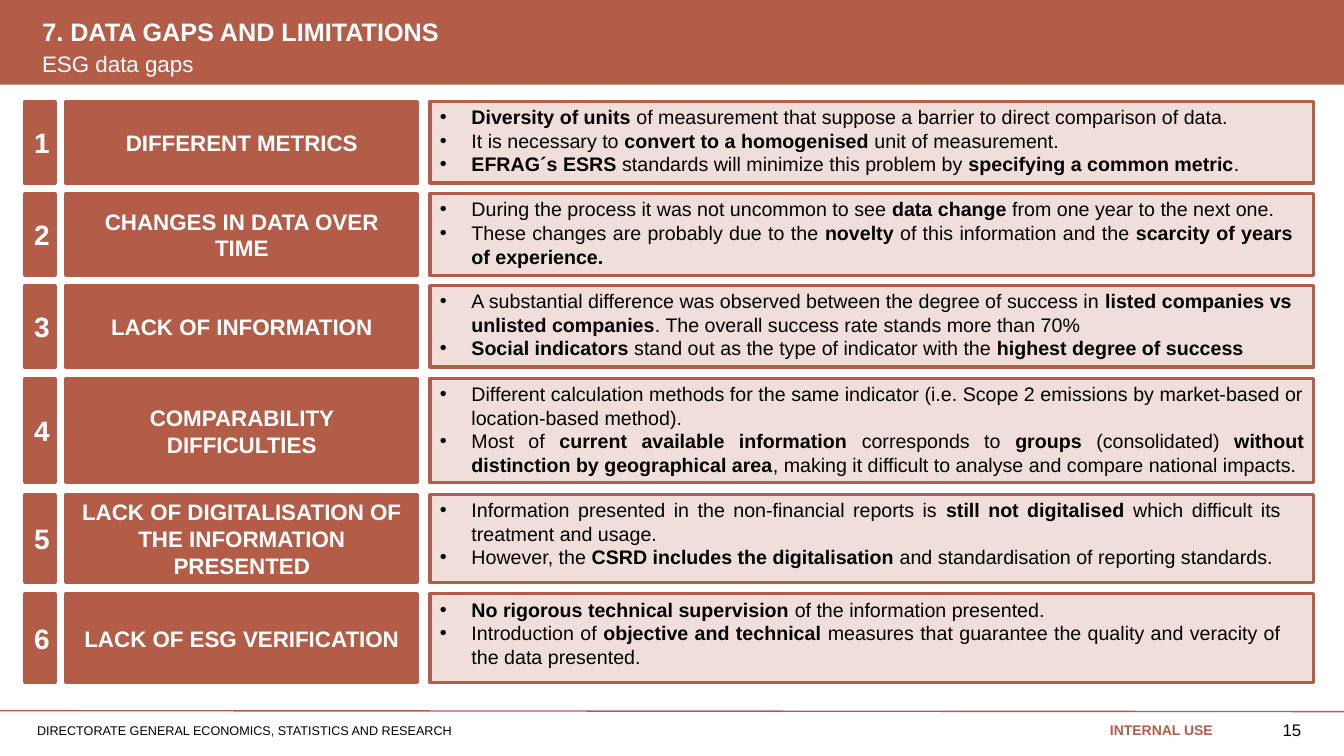
from lxml import etree
from pptx import Presentation
from pptx.dml.color import RGBColor
from pptx.enum.shapes import MSO_CONNECTOR, MSO_SHAPE
from pptx.enum.text import MSO_ANCHOR, MSO_AUTO_SIZE, PP_ALIGN
from pptx.oxml.ns import qn
from pptx.util import Pt

RECT = MSO_SHAPE.RECTANGLE
TOP, MIDDLE = MSO_ANCHOR.TOP, MSO_ANCHOR.MIDDLE
LEFT, CENTER, RIGHT, JUSTIFY = PP_ALIGN.LEFT, PP_ALIGN.CENTER, PP_ALIGN.RIGHT, PP_ALIGN.JUSTIFY
COLORS = {"brick": "B35C48", "blush": "F0DEDA", "white": "FFFFFF", "black": "000000"}
RGB = {name: RGBColor.from_string(value) for name, value in COLORS.items()}


def add_box(left, top, width, height, fill, line_width=2.25):
    box = slide.shapes.add_shape(RECT, Pt(left), Pt(top), Pt(width), Pt(height))
    box.shadow.inherit = False
    box.fill.solid()
    box.fill.fore_color.rgb = RGB[fill]
    if line_width:
        box.line.color.rgb = RGB["brick"]
        box.line.width = Pt(line_width)
    else:
        box.line.fill.background()
    return box


def write(paragraph, text, size, color, bold=False, align=LEFT):
    """Write text in which ** switches bold on and off."""
    paragraph.alignment = align
    for index, part in enumerate(text.split("**")):
        if part:
            run = paragraph.add_run()
            run.text = part
            font_format = {"name": "Arial", "size": Pt(size), "bold": bold or index % 2 == 1}
            for attribute, value in font_format.items():
                setattr(run.font, attribute, value)
            run.font.color.rgb = RGB[color]


prs = Presentation()
prs.slide_width, prs.slide_height = Pt(960), Pt(540)
slide = prs.slides.add_slide(prs.slide_layouts[5])

# Header band, sent behind the title
header = add_box(0, 0, 960, 60.5, "brick", 0)
slide.shapes._spTree.insert(2, header._element)

# Title
title = slide.shapes.title
title.left, title.top, title.width, title.height = Pt(23), Pt(10.8), Pt(669), Pt(22.3)
title_format = {"vertical_anchor": TOP, "word_wrap": True, "auto_size": MSO_AUTO_SIZE.NONE}
for attribute, value in title_format.items():
    setattr(title.text_frame, attribute, value)
title.text_frame.paragraphs[0].line_spacing = 0.9
write(title.text_frame.paragraphs[0], "7. DATA GAPS AND LIMITATIONS", 18, "white", True)

# Footer rule
footer_rule = slide.shapes.add_connector(MSO_CONNECTOR.STRAIGHT, Pt(0), Pt(507.6), Pt(960), Pt(508.3))
footer_rule.line.color.rgb = RGB["brick"]
footer_rule.line.width = Pt(1)
etree.SubElement(footer_rule._element.spPr, qn("a:effectLst"))

# Subtitle and footer texts: place, text, size, colour, bold, alignment, line spacing, right inset
captions = [
    ((23, 34.6, 669, 22.3), "ESG data gaps", 16, "white", False, LEFT, 0.9, 7.2),
    ((19.4, 514, 562, 20), "DIRECTORATE GENERAL ECONOMICS, STATISTICS AND RESEARCH",
     9, "black", False, LEFT, 0.9, 7.2),
    ((707, 512, 166.3, 23), "INTERNAL USE", 10, "brick", True, RIGHT, 1.0, 7.2),
    ((879.8, 510.5, 49.7, 23.8), "15", 12, "black", False, RIGHT, 1.0, 0),
]
for place, text, size, color, bold, align, spacing, right_inset in captions:
    caption = slide.shapes.add_textbox(*map(Pt, place)).text_frame
    caption.word_wrap = True
    caption.margin_right = Pt(right_inset)
    caption.paragraphs[0].line_spacing = spacing
    write(caption.paragraphs[0], text, size, color, bold, align)

# Gaps: top, height, free space right of the findings, heading, findings
gaps = [
    (72.5, 58.2, 0, "DIFFERENT METRICS", [
        "**Diversity of units **of measurement that suppose a barrier to direct comparison of data.",
        "It is necessary to **convert to a homogenised **unit of measurement.",
        "**EFRAG´s ESRS **standards will minimize this problem by **specifying a common metric**.",
    ]),
    (138.4, 58.2, 8, "CHANGES IN DATA OVER TIME", [
        "During the process it was not uncommon to see **data change** from one year to the next one.",
        "These changes are probably due to the **novelty** of this information and the "
        "**scarcity of years of experience.**",
    ]),
    (204, 58.2, 8.5, "LACK OF INFORMATION", [
        "A substantial difference was observed between the degree of success in **listed companies "
        "vs unlisted companies**. The overall success rate stands more than 70%",
        "**Social indicators **stand out as the type of indicator with the **highest degree of success**",
    ]),
    (270.4, 74.6, 0, "COMPARABILITY DIFFICULTIES", [
        "Different calculation methods for the same indicator (i.e. Scope 2 emissions by "
        "market-based or location-based method).",
        "Most of **current available information **corresponds to **groups** (consolidated) "
        "**without distinction by geographical area**, making it difficult to analyse and "
        "compare national impacts.",
    ]),
    (353.3, 63, 16.5, "LACK OF DIGITALISATION OF THE INFORMATION PRESENTED", [
        "Information presented in the non-financial reports is **still not digitalised **which "
        "difficult its treatment and usage.",
        "However, the **CSRD includes the digitalisation **and standardisation of reporting standards.",
    ]),
    (424.2, 63.4, 16.5, "LACK OF ESG VERIFICATION", [
        "**No rigorous technical supervision **of the information presented.",
        "Introduction of **objective and technical **measures that guarantee the quality and "
        "veracity of the data presented.",
    ]),
]
for number, (top, height, free_space, heading, findings) in enumerate(gaps, start=1):
    # Number and heading
    for left, width, text, size in [(17.3, 22.3, str(number), 20), (47, 251.5, heading, 16)]:
        label = add_box(left, top, width, height, "brick").text_frame
        label.vertical_anchor = MIDDLE
        write(label.paragraphs[0], text, size, "white", True, CENTER)

    # Findings
    panel = add_box(307.2, top, 631.4, height, "blush").text_frame
    panel_format = {"vertical_anchor": TOP, "word_wrap": True,
                    "margin_top": Pt(2.6), "margin_right": Pt(7.2 + free_space)}
    for attribute, value in panel_format.items():
        setattr(panel, attribute, value)
    for index, finding in enumerate(findings):
        paragraph = panel.add_paragraph() if index else panel.paragraphs[0]
        properties = paragraph._p.get_or_add_pPr()
        properties.set("marL", str(Pt(22.5)))
        properties.set("indent", str(-Pt(22.5)))
        etree.SubElement(properties, qn("a:buFont"), typeface="Arial")
        etree.SubElement(properties, qn("a:buChar"), char="•")
        write(paragraph, finding, 14, "black", align=JUSTIFY)

prs.save("out.pptx")
